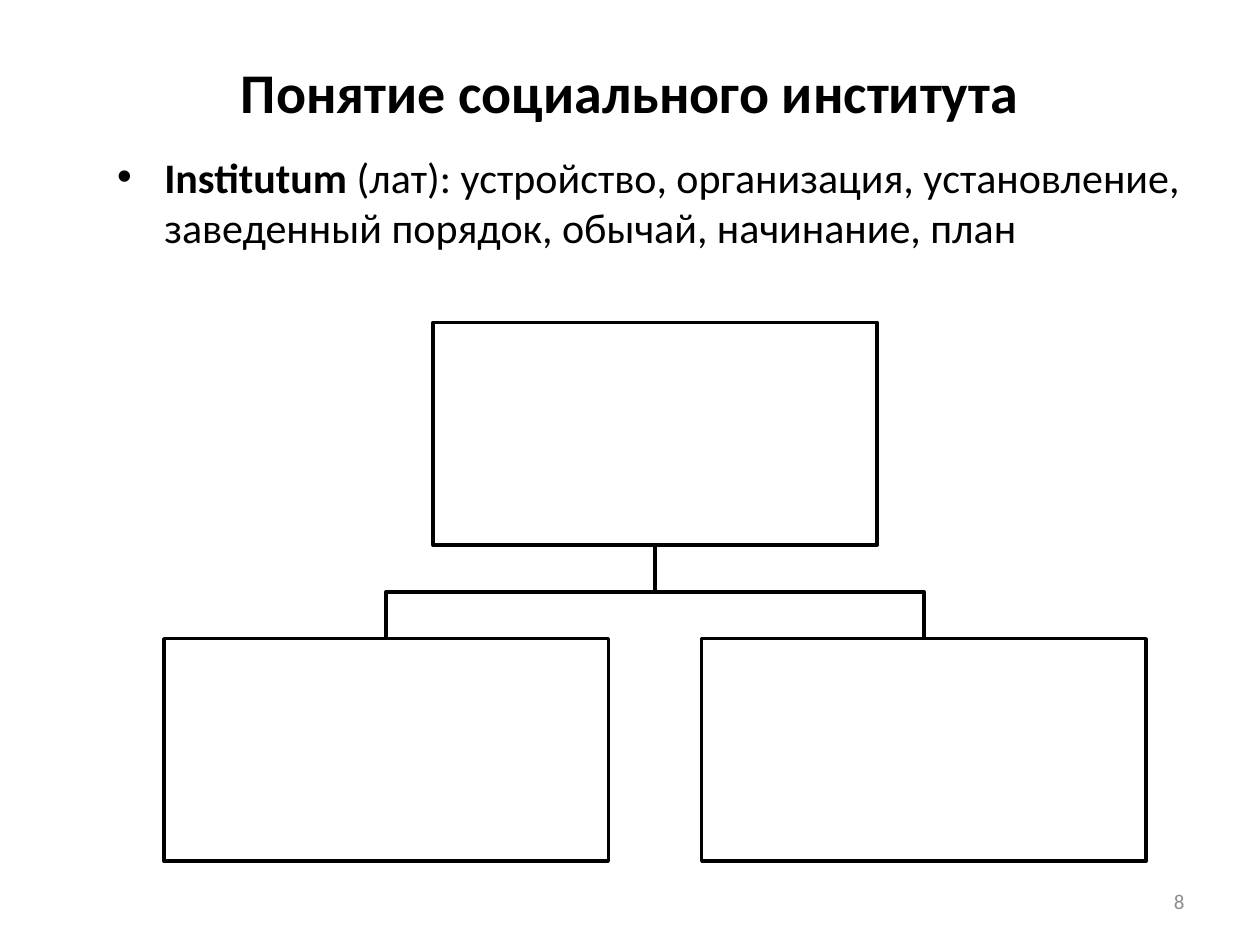
"""Build a slide defining the social institution above an empty hierarchy."""
from typing import NamedTuple

from lxml import etree
from pptx import Presentation
from pptx import util as u
from pptx.dml.color import RGBColor
from pptx.enum import shapes, text
from pptx.oxml import ns

FONT = "Calibri"
BLACK, WHITE, GREY = "000000", "FFFFFF", "8C8C8C"
LINE_WIDTH = 2
BOX_WIDTH, BOX_HEIGHT = 254, 127
ROOT_CENTER, ROOT_TOP = 374.3, 184.4
CHILD_OFFSET, LEVEL_GAP = 153.7, 53.6
BULLET_INDENT = 27


class Span(NamedTuple):
    words: str
    bold: bool = False


class Label(NamedTuple):
    left: float
    top: float
    width: float
    height: float
    spans: tuple[Span, ...]
    size: float
    align: text.PP_ALIGN
    anchor: text.MSO_ANCHOR = text.MSO_ANCHOR.MIDDLE
    color: str = BLACK
    bullet: bool = False


class Node(NamedTuple):
    center: float
    top: float


LABELS = (
    Label(36, 21.6, 648, 61.2, (Span("Понятие социального института", True),),
          32, text.PP_ALIGN.CENTER),
    Label(59.8, 82.8, 629.3, 446.4,
          (Span("Institutum", True),
           Span(" (лат): устройство, организация, установление, "
                "заведенный порядок, обычай, начинание, план")),
          24, text.PP_ALIGN.LEFT, text.MSO_ANCHOR.TOP, bullet=True),
    Label(516.2, 500.4, 167.8, 28.8, (Span("8"),), 12,
          text.PP_ALIGN.RIGHT, color=GREY),
)
ROOT = Node(ROOT_CENTER, ROOT_TOP)
CHILDREN = tuple(
    Node(ROOT_CENTER + side * CHILD_OFFSET, ROOT_TOP + BOX_HEIGHT + LEVEL_GAP)
    for side in (-1, 1)
)


def rgb(value: str) -> RGBColor:
    return RGBColor.from_string(value)


def add_bullet(para) -> None:
    properties = para._p.get_or_add_pPr()
    properties.set("marL", str(u.Pt(BULLET_INDENT)))
    properties.set("indent", str(-u.Pt(BULLET_INDENT)))
    etree.SubElement(properties, ns.qn("a:buFont")).set("typeface", "Arial")
    etree.SubElement(properties, ns.qn("a:buChar")).set("char", "•")


def draw_label(page, label: Label) -> None:
    box = page.shapes.add_textbox(*map(u.Pt, label[:4]))
    frame = box.text_frame
    frame.word_wrap = True
    frame.vertical_anchor = label.anchor
    para = frame.paragraphs[0]
    para.alignment = label.align
    if label.bullet:
        para.space_before = u.Pt(label.size * 0.2)
        add_bullet(para)
    for span in label.spans:
        run = para.add_run()
        run.text = span.words
        run.font.name = FONT
        run.font.size = u.Pt(label.size)
        run.font.bold = span.bold
        run.font.color.rgb = rgb(label.color)


def set_outline(shape) -> None:
    shape.shadow.inherit = False
    shape.line.color.rgb = rgb(BLACK)
    shape.line.width = u.Pt(LINE_WIDTH)


def draw_branch(page, parent: Node, child: Node) -> None:
    start = parent.top + BOX_HEIGHT
    middle = (start + child.top) / 2
    corners = ((parent.center, middle), (child.center, middle), child)
    builder = page.shapes.build_freeform(u.Pt(parent.center), u.Pt(start))
    builder.add_line_segments([(u.Pt(x), u.Pt(y)) for x, y in corners], close=False)
    branch = builder.convert_to_shape()
    branch.fill.background()
    set_outline(branch)


def draw_node(page, node: Node) -> None:
    box = page.shapes.add_shape(
        shapes.MSO_SHAPE.RECTANGLE,
        u.Pt(node.center - BOX_WIDTH / 2), u.Pt(node.top),
        u.Pt(BOX_WIDTH), u.Pt(BOX_HEIGHT))
    box.fill.solid()
    box.fill.fore_color.rgb = rgb(WHITE)
    set_outline(box)


def main() -> None:
    deck = Presentation()
    deck.slide_width, deck.slide_height = u.Pt(720), u.Pt(540)
    page = deck.slides.add_slide(deck.slide_layouts[6])
    for label in LABELS:
        draw_label(page, label)
    for child in reversed(CHILDREN):
        draw_branch(page, ROOT, child)
    for node in (ROOT, *CHILDREN):
        draw_node(page, node)
    deck.save("out.pptx")


if __name__ == "__main__":
    main()
